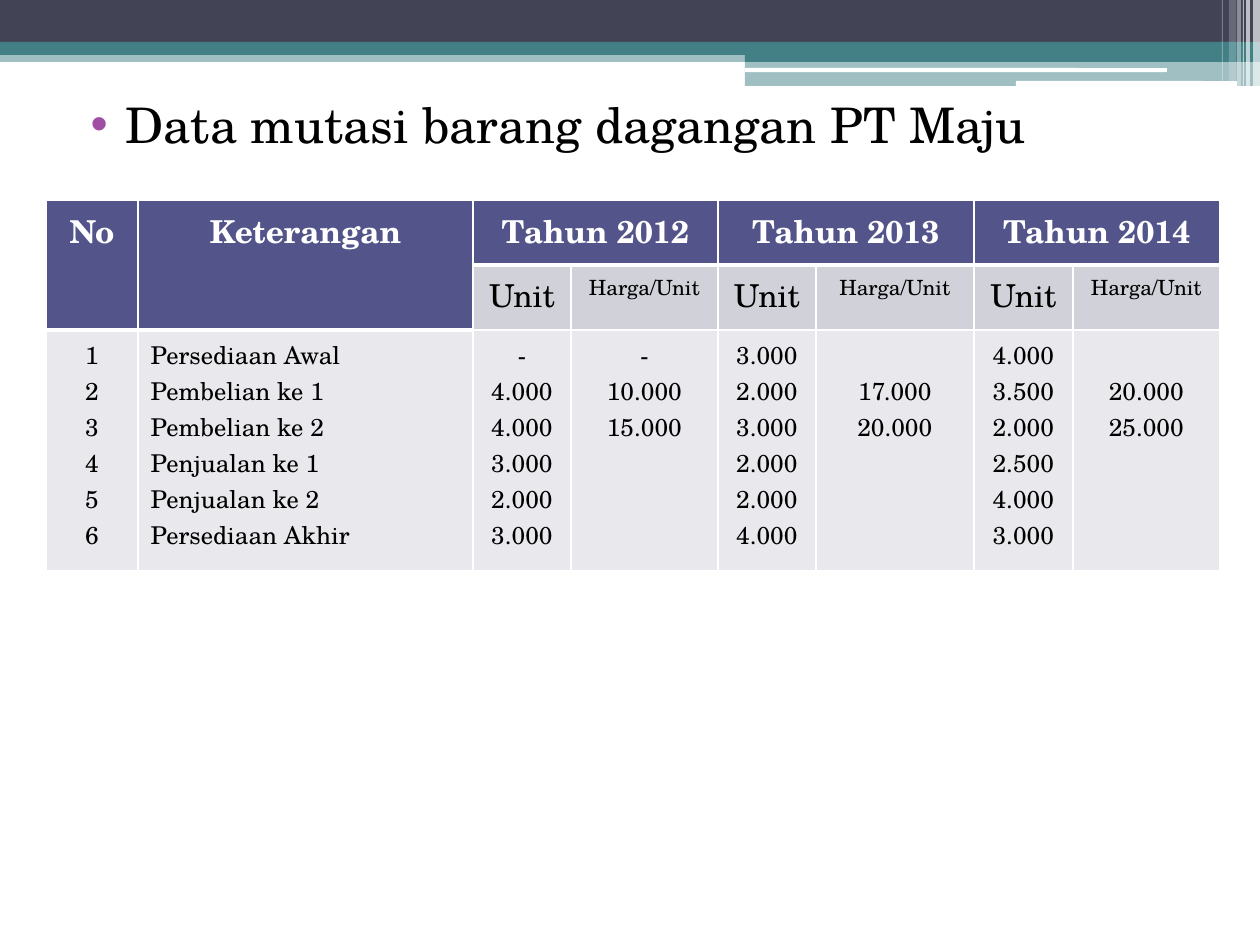
from lxml.etree import SubElement
from pptx import Presentation
from pptx.dml.color import RGBColor
from pptx.enum.shapes import MSO_SHAPE
from pptx.enum.text import MSO_AUTO_SIZE, PP_ALIGN
from pptx.oxml import parse_xml
from pptx.oxml.ns import nsdecls, qn
from pptx.util import Pt

SCALE = 914400 / 126
FONT = "TeX Gyre Schola"
WHITE, BLACK, NAVY, TEAL = "FFFFFF", "000000", "424456", "438086"
HEAD, SUBHEAD, BODY, BULLET = "53548A", "D1D1DA", "E9E9ED", "A04DA3"

BARS = [
    (0, 50, 1260, 12, TEAL, 50),
    (0, 0, 1260, 42, NAVY, 100),
    (0, 42, 1260, 13, TEAL, 100),
    (745, 49, 515, 13, TEAL, 100),
    (745, 61, 515, 25, TEAL, 50),
]
ROUNDED_BARS = [(745, 68, 422, 4), (1016, 81, 221, 5)]
STRIPES = [
    (1253, 7, 86, 65), (1246, 4, 86, 65), (1243, 1, 86, 60),
    (1237, 4, 86, 40), (1229, 7, 81, 20), (1222, 1, 81, 30),
]
COLUMN_WIDTHS = [92, 335, 98, 147, 98, 158, 99, 147]
ROW_HEIGHTS = [65, 65, 241]
LINE_PITCH = 36
LABELS = ["Persediaan Awal", "Pembelian ke 1", "Pembelian ke 2",
          "Penjualan ke 1", "Penjualan ke 2", "Persediaan Akhir"]
YEARS = [
    ("Tahun 2012", ["-", "4.000", "4.000", "3.000", "2.000", "3.000"],
     ["-", "10.000", "15.000"], 0),
    ("Tahun 2013", ["3.000", "2.000", "3.000", "2.000", "2.000", "4.000"],
     ["17.000", "20.000"], 1),
    ("Tahun 2014", ["4.000", "3.500", "2.000", "2.500", "4.000", "3.000"],
     ["20.000", "25.000"], 1),
]


def px(length):
    """Turn px into EMU."""
    return round(length * SCALE)


def rgb(value):
    """Turn a hex string into a colour."""
    return RGBColor.from_string(value)


class SlideBuilder:
    """Holds the style and the current slide."""

    def __init__(self, slide, font):
        """Keep the slide and the font name."""
        self.slide = slide
        self.font = font

    def bar(self, left, top, width, height, color, opacity=100, kind=MSO_SHAPE.RECTANGLE):
        """Draw a borderless filled bar."""
        shape = self.slide.shapes.add_shape(kind, px(left), px(top), px(width), px(height))
        shape.shadow.inherit = False
        shape.line.fill.background()
        shape.fill.solid()
        shape.fill.fore_color.rgb = rgb(color)
        if opacity < 100:
            color_node = shape.element.spPr.find(qn("a:solidFill"))[0]
            SubElement(color_node, qn("a:alpha"), val=str(opacity * 1000))

    def style(self, para, size, color, bold=False):
        """Set the font of a paragraph."""
        para.font.name = self.font
        para.font.size = Pt(size)
        para.font.bold = bold
        para.font.color.rgb = rgb(color)

    def bullet_line(self, left, top, width, height, text, size):
        """Fill the body placeholder with one bulleted line."""
        box = self.slide.placeholders[1]
        box.left, box.top, box.width, box.height = px(left), px(top), px(width), px(height)
        box.text_frame.auto_size = MSO_AUTO_SIZE.NONE
        box.text_frame.text = text
        para = box.text_frame.paragraphs[0]
        self.style(para, size, BLACK)
        para.space_before = Pt(3)
        properties = para._p.get_or_add_pPr()
        properties.set("marL", str(px(50)))
        properties.set("indent", str(px(-35)))
        for mark in (
            f'<a:buClr {nsdecls("a")}><a:srgbClr val="{BULLET}"/></a:buClr>',
            f'<a:buChar {nsdecls("a")} char="•"/>',
        ):
            properties.find(qn("a:defRPr")).addprevious(parse_xml(mark))

    def table(self, left, top, widths, heights):
        """Add a plain table and return it."""
        frame = self.slide.shapes.add_table(len(heights), len(widths), px(left), px(top),
                                            px(sum(widths)), px(sum(heights)))
        table = frame.table
        table.first_row = table.horz_banding = False
        for column, width in zip(table.columns, widths):
            column.width = px(width)
        for row, height in zip(table.rows, heights):
            row.height = px(height)
        return table

    def paint(self, cell, fill, top=1, bottom=1):
        """Fill a cell and draw its white borders."""
        cell.fill.solid()
        cell.fill.fore_color.rgb = rgb(fill)
        properties = cell._tc.get_or_add_tcPr()
        borders = [("lnL", 1), ("lnR", 1), ("lnT", top), ("lnB", bottom)]
        for place, (side, weight) in enumerate(borders):
            properties.insert(place, parse_xml(
                f'<a:{side} {nsdecls("a")} w="{Pt(weight)}"><a:solidFill>'
                f'<a:srgbClr val="{WHITE}"/></a:solidFill></a:{side}>'))

    def cell_text(self, cell, lines, size, color=BLACK, bold=False, align=PP_ALIGN.CENTER, skip=0):
        """Put lines into a cell, starting a number of lines down."""
        cell.text_frame.text = "\n".join(lines)
        if skip:
            cell.margin_top += px(skip * LINE_PITCH)
        for para in cell.text_frame.paragraphs:
            para.alignment = align
            self.style(para, size, color, bold)


def is_head(row, column):
    """Tell whether a cell belongs to the dark heading."""
    return row == 0 or (row == 1 and column < 2)


def fill_table(builder, table):
    """Paint, merge and fill the stock table."""
    for row in range(len(ROW_HEIGHTS)):
        for column in range(len(COLUMN_WIDTHS)):
            head = is_head(row, column)
            below_head = row > 0 and not head and is_head(row - 1, column)
            fill = HEAD if head else (SUBHEAD if row == 1 else BODY)
            builder.paint(table.cell(row, column), fill,
                          top=3 if below_head else 1, bottom=3 if head else 1)
    for column, heading in enumerate(["No", "Keterangan"]):
        table.cell(0, column).merge(table.cell(1, column))
        builder.cell_text(table.cell(0, column), [heading], 18, WHITE, True)
    numbers = [str(number) for number in range(1, len(LABELS) + 1)]
    builder.cell_text(table.cell(2, 0), numbers, 14)
    builder.cell_text(table.cell(2, 1), LABELS, 14, align=PP_ALIGN.LEFT)
    for index, (year, units, prices, skip) in enumerate(YEARS):
        column = 2 + 2 * index
        table.cell(0, column).merge(table.cell(0, column + 1))
        builder.cell_text(table.cell(0, column), [year], 18, WHITE, True)
        builder.cell_text(table.cell(1, column), ["Unit"], 18)
        builder.cell_text(table.cell(1, column + 1), ["Harga/Unit"], 12)
        builder.cell_text(table.cell(2, column), units, 14)
        builder.cell_text(table.cell(2, column + 1), prices, 14, skip=skip)


def main():
    """Build the slide and save it."""
    deck = Presentation()
    deck.slide_width, deck.slide_height = px(1260), px(945)
    page = deck.slides.add_slide(deck.slide_layouts[1])
    title = page.shapes.title
    title.element.getparent().remove(title.element)
    builder = SlideBuilder(page, FONT)
    for bar in BARS:
        builder.bar(*bar)
    for bar in ROUNDED_BARS:
        builder.bar(*bar, WHITE, kind=MSO_SHAPE.ROUNDED_RECTANGLE)
    for left, width, height, opacity in STRIPES:
        builder.bar(left, 0, width, height, WHITE, opacity)
    builder.bullet_line(63, 88, 1134, 818, "Data mutasi barang dagangan PT Maju", 28)
    fill_table(builder, builder.table(46, 200, COLUMN_WIDTHS, ROW_HEIGHTS))
    deck.save("out.pptx")


if __name__ == "__main__":
    main()
